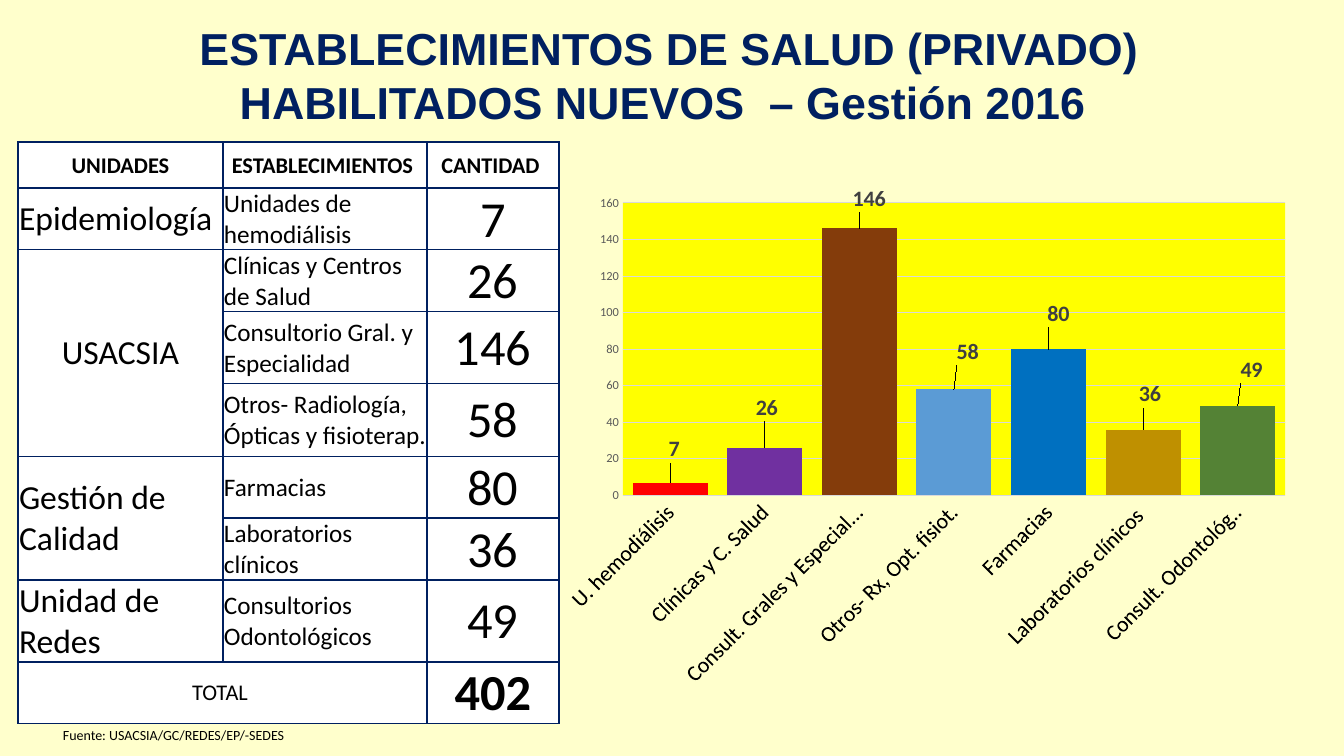
"""Build the slide on newly licensed private health establishments, 2016."""
from dataclasses import dataclass

from pptx import Presentation
from pptx.chart.data import CategoryChartData
from pptx.dml.color import RGBColor
from pptx.enum.chart import XL_CHART_TYPE, XL_LABEL_POSITION, XL_TICK_MARK
from pptx.enum.text import MSO_ANCHOR, MSO_AUTO_SIZE, PP_ALIGN
from pptx.oxml import parse_xml
from pptx.oxml.ns import nsdecls, qn
from pptx.util import Emu, Pt

COLUMN = XL_CHART_TYPE.COLUMN_CLUSTERED
OUTSIDE_END = XL_LABEL_POSITION.OUTSIDE_END
NO_TICK = XL_TICK_MARK.NONE
MIDDLE = MSO_ANCHOR.MIDDLE
FIT_TEXT = MSO_AUTO_SIZE.SHAPE_TO_FIT_TEXT
LEFT, CENTER = PP_ALIGN.LEFT, PP_ALIGN.CENTER

CREAM = RGBColor(0xFF, 0xFF, 0xCC)
NAVY = RGBColor(0x00, 0x20, 0x60)
BLACK = RGBColor(0x00, 0x00, 0x00)
WHITE = RGBColor(0xFF, 0xFF, 0xFF)
YELLOW = RGBColor(0xFF, 0xFF, 0x00)
GRID_GRAY = RGBColor(0xD9, 0xD9, 0xD9)
AXIS_GRAY = RGBColor(0x59, 0x59, 0x59)
LABEL_GRAY = RGBColor(0x40, 0x40, 0x40)
RED = RGBColor(0xFF, 0x00, 0x00)
PURPLE = RGBColor(0x70, 0x30, 0xA0)
BROWN = RGBColor(0x84, 0x3C, 0x0B)
SKY = RGBColor(0x5B, 0x9B, 0xD5)
BLUE = RGBColor(0x00, 0x70, 0xC0)
GOLD = RGBColor(0xBF, 0x90, 0x00)
GREEN = RGBColor(0x54, 0x82, 0x35)

CHART_W, CHART_H = 738, 519
COLUMN_WIDTHS = (205, 204, 132)
ROW_HEIGHTS = (46, 61, 62, 72, 73, 61, 62, 82, 61)


@dataclass(frozen=True)
class TextStyle:
    """Typeface, size, colour and alignment of a paragraph."""
    size: int
    color: RGBColor = BLACK
    bold: bool = False
    align: PP_ALIGN = LEFT
    face: str = "Calibri"


@dataclass(frozen=True)
class Establishment:
    """One kind of establishment, with its bar and its label offset in px."""
    unit: str
    unit_rows: int
    name: str
    category: str
    count: int
    color: RGBColor
    label_dx: int
    label_dy: int


TITLE = TextStyle(32, NAVY, True, CENTER, "Arial")
SOURCE = TextStyle(10)
HEADER = TextStyle(16, bold=True, align=CENTER)
UNIT = TextStyle(24)
UNIT_CENTERED = TextStyle(24, align=CENTER)
NAME = TextStyle(18)
COUNT = TextStyle(36, align=CENTER)
TOTAL = TextStyle(16, align=CENTER)
TOTAL_COUNT = TextStyle(36, bold=True, align=CENTER)
BAR_LABEL = TextStyle(16, LABEL_GRAY, True)

HEADINGS = ("UNIDADES", "ESTABLECIMIENTOS ", "CANTIDAD ")
ESTABLISHMENTS = (
    Establishment("Epidemiología", 1, "Unidades de hemodiálisis", "U. hemodiálisis", 7, RED, 4, -16),
    Establishment("USACSIA", 3, "Clínicas y Centros de Salud", "Clínicas y C. Salud", 26, PURPLE, 2, -23),
    Establishment("", 0, "Consultorio Gral. y Especialidad", "Consult. Grales y Especialidad", 146,
                  BROWN, 10, -12),
    Establishment("", 0, "Otros- Radiología, Ópticas y fisioterap.", "Otros- Rx, Opt. fisiot.", 58,
                  SKY, 14, -20),
    Establishment("Gestión de Calidad", 2, "Farmacias", "Farmacias", 80, BLUE, 10, -18),
    Establishment("", 0, "Laboratorios clínicos", "Laboratorios clínicos ", 36, GOLD, 7, -18),
    Establishment("Unidad de Redes", 1, "Consultorios Odontológicos", "Consult. Odontológ..", 49,
                  GREEN, 14, -19),
)


def px(length: int) -> Emu:
    """Turn px into EMU."""
    return Emu(round(length * 914400 / 100.8))


def style_font(font, style: TextStyle) -> None:
    """Apply a text style to a font."""
    font.name, font.size, font.bold = style.face, Pt(style.size), style.bold
    font.color.rgb = style.color


def write(frame, lines: tuple[str, ...], style: TextStyle) -> None:
    """Write one styled paragraph per line."""
    for index, line in enumerate(lines):
        paragraph = frame.add_paragraph() if index else frame.paragraphs[0]
        paragraph.text, paragraph.alignment = line, style.align
        style_font(paragraph.font, style)


def add_text(slide, box: tuple[int, ...], lines: tuple[str, ...], style: TextStyle) -> None:
    """Add an unwrapped text box."""
    frame = slide.shapes.add_textbox(*map(px, box)).text_frame
    frame.word_wrap, frame.auto_size = False, FIT_TEXT
    write(frame, lines, style)


def style_cell(cell) -> None:
    """Give a cell its fill, margins, anchor and borders."""
    cell.fill.solid()
    cell.fill.fore_color.rgb = WHITE
    cell.margin_left = cell.margin_right = cell.margin_top = px(1)
    cell.margin_bottom = 0
    cell.vertical_anchor = MIDDLE
    properties = cell._tc.get_or_add_tcPr()
    for index, side in enumerate(("lnL", "lnR", "lnT", "lnB")):
        properties.insert(index, parse_xml(
            f'<a:{side} {nsdecls("a")} w="{Pt(1)}"><a:solidFill>'
            f'<a:srgbClr val="{NAVY}"/></a:solidFill></a:{side}>'))


def add_counts_table(slide) -> None:
    """Add the table of establishments by unit."""
    size = (sum(COLUMN_WIDTHS), sum(ROW_HEIGHTS))
    table = slide.shapes.add_table(len(ROW_HEIGHTS), len(COLUMN_WIDTHS),
                                   px(18), px(142), *map(px, size)).table
    table.first_row = table.horz_banding = False
    for column, width in zip(table.columns, COLUMN_WIDTHS):
        column.width = px(width)
    for row, height in zip(table.rows, ROW_HEIGHTS):
        row.height = px(height)
    for cell in table.iter_cells():
        style_cell(cell)
    for column, heading in enumerate(HEADINGS):
        write(table.cell(0, column).text_frame, (heading,), HEADER)
    for row, item in enumerate(ESTABLISHMENTS, 1):
        if item.unit:
            unit_cell = table.cell(row, 0)
            if item.unit_rows > 1:
                unit_cell.merge(table.cell(row + item.unit_rows - 1, 0))
            write(unit_cell.text_frame, (item.unit,), UNIT_CENTERED if item.unit_rows == 3 else UNIT)
        write(table.cell(row, 1).text_frame, (item.name,), NAME)
        write(table.cell(row, 2).text_frame, (str(item.count),), COUNT)
    last = len(ROW_HEIGHTS) - 1
    table.cell(last, 0).merge(table.cell(last, 1))
    write(table.cell(last, 0).text_frame, ("TOTAL ",), TOTAL)
    total = sum(item.count for item in ESTABLISHMENTS)
    write(table.cell(last, 2).text_frame, (str(total),), TOTAL_COUNT)


def manual_layout(**settings: str | float):
    """Build a manual chart layout from its settings."""
    entries = "".join(f'<c:{key} val="{value}"/>' for key, value in settings.items())
    return parse_xml(f'<c:layout {nsdecls("c")}><c:manualLayout>{entries}</c:manualLayout></c:layout>')


def area_fill(fill: str):
    """Build the shape properties of a chart area without an outline."""
    return parse_xml(f'<c:spPr {nsdecls("c", "a")}>{fill}<a:ln><a:noFill/></a:ln></c:spPr>')


def add_counts_chart(slide) -> None:
    """Add the column chart of establishments."""
    data = CategoryChartData()
    data.categories = [item.category for item in ESTABLISHMENTS]
    data.add_series("Series 1", [item.count for item in ESTABLISHMENTS])
    chart = slide.shapes.add_chart(COLUMN, px(566), px(186), px(CHART_W), px(CHART_H), data).chart
    chart.has_legend = chart.has_title = False
    style_font(chart.font, TextStyle(10))
    chart_element = chart._chartSpace.find(qn("c:chart"))
    chart_element.addnext(area_fill("<a:noFill/>"))
    plot_area = chart_element.find(qn("c:plotArea"))
    for layout in plot_area.findall(qn("c:layout")):
        plot_area.remove(layout)
    plot_area.insert(0, manual_layout(layoutTarget="inner", xMode="edge", yMode="edge",
                                      x=0.062, y=0.015, w=0.912, h=0.574))
    plot_area.append(area_fill(f'<a:solidFill><a:srgbClr val="{YELLOW}"/></a:solidFill>'))

    categories, values = chart.category_axis, chart.value_axis
    for axis, style in ((categories, TextStyle(16)), (values, TextStyle(9, AXIS_GRAY))):
        axis.major_tick_mark = axis.minor_tick_mark = NO_TICK
        axis.format.line.fill.background()
        style_font(axis.tick_labels.font, style)
    categories._element.find(".//" + qn("a:bodyPr")).set("rot", "-2700000")
    values.minimum_scale, values.maximum_scale, values.major_unit = 0, 160, 20
    gridlines = values.major_gridlines.format.line
    gridlines.color.rgb, gridlines.width = GRID_GRAY, Pt(0.75)

    plot = chart.plots[0]
    plot.gap_width, plot.vary_by_categories = 26, False
    series = plot.series[0]
    series.format.fill.solid()
    series.format.fill.fore_color.rgb = SKY
    series.data_labels.show_value = True
    style_font(series.data_labels.font, BAR_LABEL)
    for index, item in enumerate(ESTABLISHMENTS):
        point = series.points[index]
        point.format.fill.solid()
        point.format.fill.fore_color.rgb = item.color
        style_font(point.data_label.font, BAR_LABEL)
        point.data_label.position = OUTSIDE_END
    for item, label in zip(ESTABLISHMENTS, series._element.iter(qn("c:dLbl"))):
        label.insert(1, manual_layout(x=round(item.label_dx / CHART_W, 4),
                                      y=round(item.label_dy / CHART_H, 4)))


def main() -> None:
    """Build and save the slide."""
    deck = Presentation()
    deck.slide_width, deck.slide_height = px(1344), px(756)
    slide = deck.slides.add_slide(deck.slide_layouts[6])
    slide.background.fill.solid()
    slide.background.fill.fore_color.rgb = CREAM
    add_text(slide, (185, 16, 981, 119),
             ("ESTABLECIMIENTOS DE SALUD (PRIVADO) ", "HABILITADOS NUEVOS  – Gestión 2016  "), TITLE)
    add_text(slide, (53, 722, 246, 27), ("Fuente: USACSIA/GC/REDES/EP/-SEDES",), SOURCE)
    add_counts_table(slide)
    add_counts_chart(slide)
    deck.save("out.pptx")


if __name__ == "__main__":
    main()
